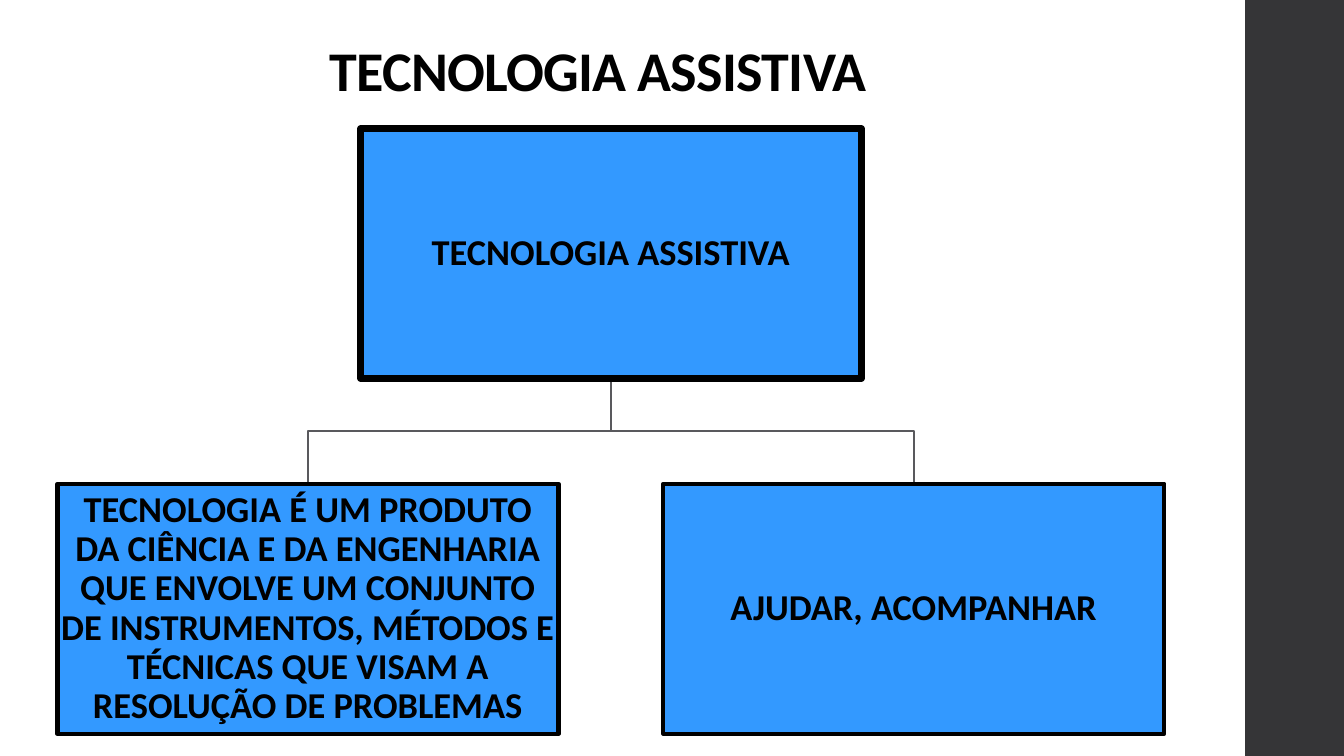
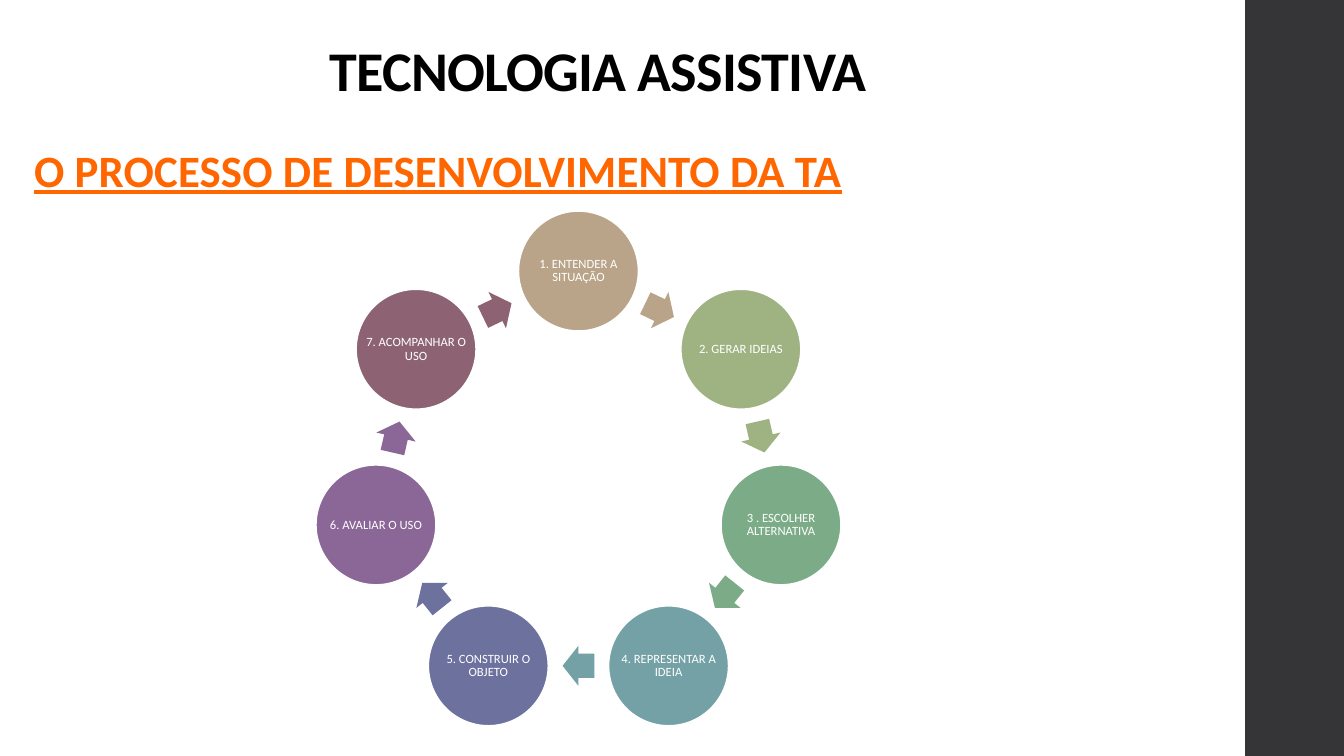
"""Builds two slides on assistive technology: a concept tree and a process ring."""
import math

from pptx import Presentation
from pptx.dml.color import RGBColor
from pptx.enum import shapes, text
from pptx.util import Inches, Pt

BLACK = RGBColor(0x00, 0x00, 0x00)
WHITE = RGBColor(0xFF, 0xFF, 0xFF)
CHARCOAL = RGBColor(0x35, 0x35, 0x37)
GRAY = RGBColor(0x59, 0x59, 0x5D)
BLUE = RGBColor(0x33, 0x99, 0xFF)
ORANGE = RGBColor(0xFF, 0x66, 0x00)
SAND = RGBColor(0xB9, 0xA4, 0x89)
OLIVE = RGBColor(0x9F, 0xB3, 0x82)
GREEN = RGBColor(0x7B, 0xAC, 0x87)
TEAL = RGBColor(0x74, 0xA1, 0xA5)
INDIGO = RGBColor(0x6D, 0x71, 0x9E)
PURPLE = RGBColor(0x8B, 0x67, 0x97)
PLUM = RGBColor(0x8D, 0x63, 0x74)

deck = Presentation()
deck.slide_width, deck.slide_height = Inches(13.33), Inches(7.5)
COL, ROW = deck.slide_width / 100, deck.slide_height / 100


def grid(*lengths):
    """Turn alternating columns and rows (hundredths of the slide) into lengths."""
    return [round(n * (ROW if i % 2 else COL)) for i, n in enumerate(lengths)]


def write(box, words, size, color=BLACK, bold=True, underline=False, spacing=0,
          align=text.PP_ALIGN.CENTER, anchor=text.MSO_ANCHOR.MIDDLE,
          line_spacing=0.9, margin=None):
    """Put one formatted paragraph into a shape."""
    frame = box.text_frame
    frame.word_wrap = True
    frame.vertical_anchor = anchor
    if margin is not None:
        frame.margin_left = frame.margin_right = Inches(margin)
        frame.margin_top = frame.margin_bottom = Inches(margin)
    para = frame.paragraphs[0]
    para.alignment, para.line_spacing = align, line_spacing
    span = para.add_run()
    span.text = words
    font = span.font
    font.name, font.size, font.bold = "Calibri", Pt(size), bold
    font.underline = underline
    font.color.rgb = color
    if spacing:
        span._r.get_or_add_rPr().set("spc", str(round(spacing * 100)))


pages = []
for number in range(2):
    page = deck.slides.add_slide(deck.slide_layouts[6])
    band = page.shapes.add_shape(shapes.MSO_SHAPE.RECTANGLE, *grid(92.65, 0, 7.35, 100))
    band.shadow.inherit = False
    band.fill.solid()
    band.fill.fore_color.rgb = CHARCOAL
    band.line.fill.background()
    title = page.shapes.add_textbox(*grid(1.8, 2.9, 86.27, 11.47))
    write(title, "TECNOLOGIA ASSISTIVA ", 40, spacing=-0.5, anchor=text.MSO_ANCHOR.BOTTOM)
    pages.append(page)
tree_page, ring_page = pages

NODE_W, NODE_H, GAP = 37.28, 33.07, 7.8
LEFT, ROOT_TOP, CHILD_TOP = 4.28, 17, 64
STEP = NODE_W + GAP
root_middle = LEFT + (STEP + NODE_W) / 2
root_bottom = ROOT_TOP + NODE_H
fork = (root_bottom + CHILD_TOP) / 2
for place in (1, 0):
    child_middle = LEFT + place * STEP + NODE_W / 2
    start, *bends = [grid(*point) for point in (
        (root_middle, root_bottom), (root_middle, fork),
        (child_middle, fork), (child_middle, CHILD_TOP))]
    outline = tree_page.shapes.build_freeform(*start)
    outline.add_line_segments(bends, close=False)
    branch = outline.convert_to_shape()
    branch.shadow.inherit = False
    branch.fill.background()
    branch.line.color.rgb = GRAY
    branch.line.width = Pt(1.1)

tree = [
    (0.5, ROOT_TOP, 4.5, "TECNOLOGIA ASSISTIVA"),
    (0, CHILD_TOP, 3, "TECNOLOGIA É UM PRODUTO DA CIÊNCIA E DA ENGENHARIA QUE ENVOLVE "
     "UM CONJUNTO DE INSTRUMENTOS, MÉTODOS E TÉCNICAS QUE VISAM A RESOLUÇÃO DE PROBLEMAS"),
    (1, CHILD_TOP, 3, "AJUDAR, ACOMPANHAR"),
]
for place, top, border, words in tree:
    node = tree_page.shapes.add_shape(
        shapes.MSO_SHAPE.RECTANGLE, *grid(LEFT + place * STEP, top, NODE_W, NODE_H))
    node.shadow.inherit = False
    node.fill.solid()
    node.fill.fore_color.rgb = BLUE
    node.line.color.rgb = BLACK
    node.line.width = Pt(border)
    write(node, words, 26, margin=0.02)

heading = ring_page.shapes.add_textbox(*grid(1.8, 18.25, 89.2, 9.6))
write(heading, "O PROCESSO DE DESENVOLVIMENTO DA TA", 32, color=ORANGE, underline=True,
      spacing=0.1, align=text.PP_ALIGN.JUSTIFY, anchor=text.MSO_ANCHOR.TOP, line_spacing=1)

steps = [
    ("1. ENTENDER A SITUAÇÃO", SAND),
    ("2. GERAR IDEIAS", OLIVE),
    ("3 . ESCOLHER ALTERNATIVA", GREEN),
    ("4. REPRESENTAR A IDEIA", TEAL),
    ("5. CONSTRUIR O OBJETO", INDIGO),
    ("6. AVALIAR O USO", PURPLE),
    ("7. ACOMPANHAR O USO", PLUM),
]
CENTER_X, CENTER_Y = grid(43.04, 63.32)
RADIUS, DISC = 27.47 * ROW, 15.87 * ROW
ARROW_W, ARROW_H = 4.2 * ROW, 5.33 * ROW
TURN = 360 / len(steps)
MIDWAY = RADIUS * math.cos(math.radians(TURN / 2))
for index, (words, color) in enumerate(steps):
    parts = [
        (shapes.MSO_SHAPE.OVAL, index * TURN, RADIUS, DISC, DISC),
        (shapes.MSO_SHAPE.RIGHT_ARROW, (index + 0.5) * TURN, MIDWAY, ARROW_W, ARROW_H),
    ]
    for kind, angle, reach, width, height in parts:
        left = CENTER_X + reach * math.sin(math.radians(angle)) - width / 2
        top = CENTER_Y - reach * math.cos(math.radians(angle)) - height / 2
        area = [round(length) for length in (left, top, width, height)]
        part = ring_page.shapes.add_shape(kind, *area)
        part.shadow.inherit = False
        part.fill.solid()
        part.fill.fore_color.rgb = color
        if kind == shapes.MSO_SHAPE.OVAL:
            part.line.color.rgb = WHITE
            part.line.width = Pt(1.1)
            label = ring_page.shapes.add_textbox(*area)
            write(label, words, 9, color=WHITE, bold=False, margin=0.01)
        else:
            part.line.fill.background()
            part.adjustments[0] = 0.6
            part.rotation = angle

deck.save("out.pptx")
